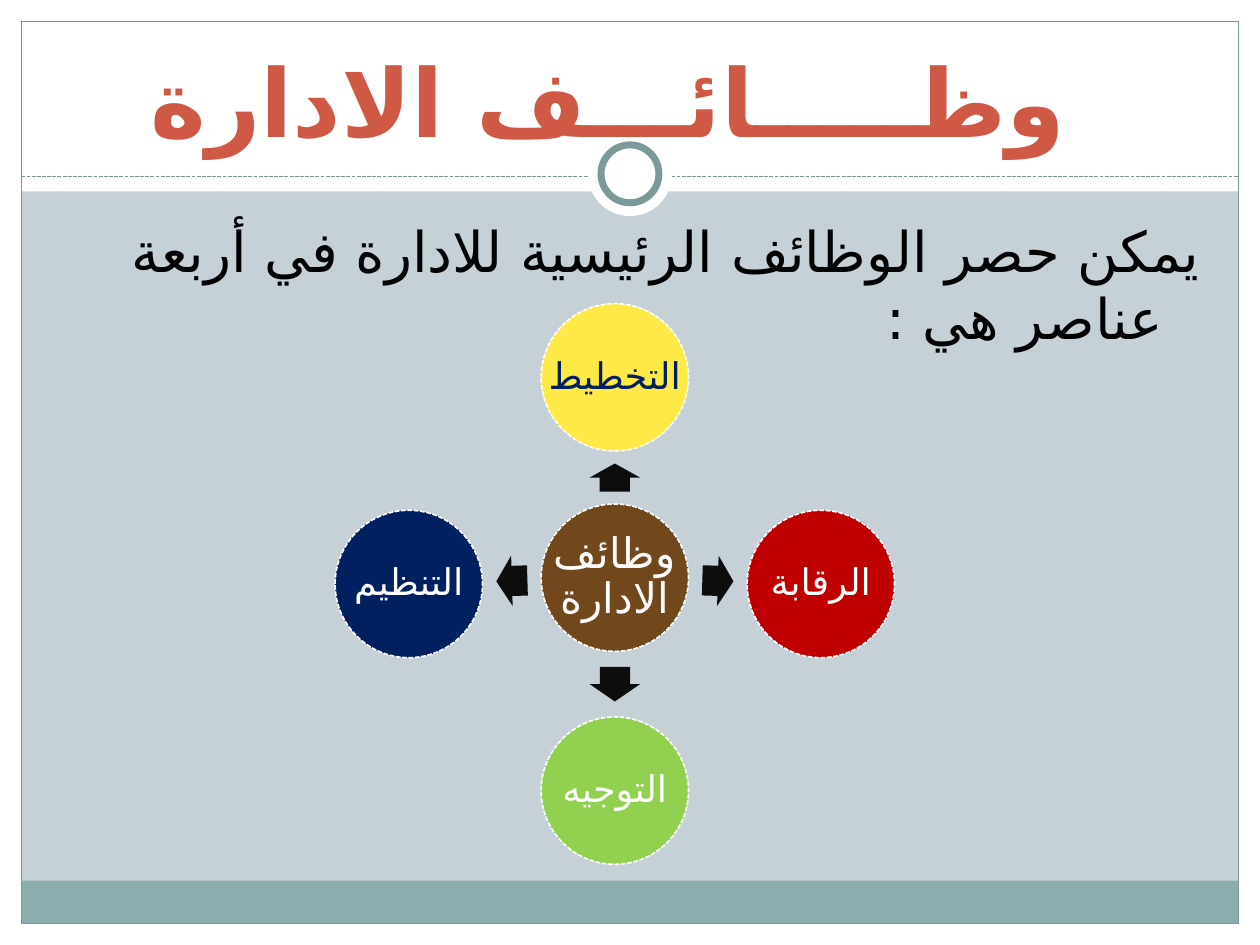
import math

import pptx
import pptx.util
from lxml import etree
from pptx.dml.color import RGBColor
from pptx.enum.dml import MSO_LINE
from pptx.enum.shapes import MSO_CONNECTOR, MSO_SHAPE
from pptx.enum.text import MSO_ANCHOR, PP_ALIGN
from pptx.oxml.ns import qn
from pptx.util import Inches, Pt

FONT = "Cambria"
ARABIC_FONT = "DejaVu Sans"
WHITE = RGBColor(0xFF, 0xFF, 0xFF)
BLACK = RGBColor(0x00, 0x00, 0x00)
BACKGROUND = RGBColor(0xC5, 0xD1, 0xD7)
FOOTER = RGBColor(0x8C, 0xAD, 0xAE)
FRAME = RGBColor(0x7C, 0x99, 0x9A)
TITLE = RGBColor(0xD0, 0x59, 0x45)
BROWN = RGBColor(0x71, 0x48, 0x1C)
YELLOW = RGBColor(0xFF, 0xE9, 0x47)
RED = RGBColor(0xC0, 0x00, 0x00)
GREEN = RGBColor(0x92, 0xD0, 0x50)
NAVY = RGBColor(0x00, 0x20, 0x60)
ARROW = RGBColor(0x0D, 0x0D, 0x0D)

MARGIN = 0.17
CIRCLE = 1.17
ARROW_WIDTH = 0.4
ARROW_SHARE = 0.53  # part of the gap between two circles that an arrow fills


def add_shape(slide, kind, box, fill=None, line=None, width=0.75, dash=None):
    shape = slide.shapes.add_shape(kind, *map(Inches, box))
    shape.shadow.inherit = False
    if fill is None:
        shape.fill.background()
    else:
        shape.fill.solid()
        shape.fill.fore_color.rgb = fill
    if line is None:
        shape.line.fill.background()
    else:
        shape.line.color.rgb = line
        shape.line.width = Pt(width)
        if dash is not None:
            shape.line.dash_style = dash
    return shape


def write_text(shape, text, size, color, bold=False, align=PP_ALIGN.CENTER,
               anchor=MSO_ANCHOR.TOP, wrap=True, line_spacing=None):
    """Fill the shape with one paragraph and return that paragraph."""
    frame = shape.text_frame
    frame.word_wrap = wrap
    frame.vertical_anchor = anchor
    paragraph = frame.paragraphs[0]
    paragraph.text = text
    paragraph.alignment = align
    paragraph.line_spacing = line_spacing
    for run in paragraph.runs:
        run.font.name = FONT
        run.font.size = Pt(size)
        run.font.bold = bold
        run.font.color.rgb = color
        complex_font = etree.SubElement(run.font._element, qn("a:cs"))
        complex_font.set("typeface", ARABIC_FONT)
    return paragraph


def add_frame(slide, box):
    """Draw the white border, header, footer band and ring of the page."""
    left, top, width, height = box
    inner_width = width - 2 * MARGIN
    bottom = top + height - MARGIN
    rectangle = MSO_SHAPE.RECTANGLE
    for white_band in (
        (left, bottom, width, MARGIN),
        (left, top, width, 1.52),
        (left, top, MARGIN, height),
        (left + width - MARGIN, top, MARGIN, height),
    ):
        add_shape(slide, rectangle, white_band, WHITE)
    add_shape(slide, rectangle, (left + MARGIN, bottom - 0.34, inner_width, 0.34), FOOTER)
    add_shape(slide, rectangle,
              (left + MARGIN, top + MARGIN, inner_width, height - 2 * MARGIN), line=FRAME)

    rule_y = Inches(top + 1.4)
    rule = slide.shapes.add_connector(
        MSO_CONNECTOR.STRAIGHT, Inches(left + MARGIN), rule_y,
        Inches(left + width - MARGIN), rule_y)
    rule.line.color.rgb = FRAME
    rule.line.width = Pt(0.75)
    rule.line.dash_style = MSO_LINE.SQUARE_DOT
    etree.SubElement(rule._element.spPr, qn("a:effectLst"))

    center_x, center_y = left + width / 2, top + 1.38
    for diameter, line in ((0.67, None), (0.46, FRAME)):
        ring_box = (center_x - diameter / 2, center_y - diameter / 2, diameter, diameter)
        add_shape(slide, MSO_SHAPE.OVAL, ring_box, WHITE, line, width=4)


def add_title(slide, box):
    title = slide.shapes.add_textbox(*map(Inches, box))
    write_text(title, "وظـــــائـــف الادارة ", 54, TITLE, bold=True)


def add_introduction(slide, box):
    introduction = slide.shapes.add_textbox(*map(Inches, box))
    paragraph = write_text(
        introduction, "يمكن حصر الوظائف الرئيسية للادارة في أربعة عناصر هي : ",
        32, BLACK, align=PP_ALIGN.RIGHT)
    paragraph.space_before = Pt(6.4)
    properties = paragraph._p.get_or_add_pPr()
    properties.set("rtl", "1")
    properties.set("marL", str(Inches(0.3)))
    properties.set("indent", str(Inches(-0.3)))


def add_circle(slide, center, text, size, fill, color=WHITE):
    box = (center[0] - CIRCLE / 2, center[1] - CIRCLE / 2, CIRCLE, CIRCLE)
    circle = add_shape(slide, MSO_SHAPE.OVAL, box, fill, WHITE, 0.9, MSO_LINE.SQUARE_DOT)
    frame = circle.text_frame
    frame.margin_left = frame.margin_right = Inches(0.03)
    frame.margin_top = frame.margin_bottom = Inches(0.03)
    write_text(circle, text, size, color, anchor=MSO_ANCHOR.MIDDLE,
               wrap=False, line_spacing=0.9)


def add_arrow(slide, start, end):
    """Point a block arrow from one circle centre to another, midway between them."""
    run, rise = end[0] - start[0], end[1] - start[1]
    length = ARROW_SHARE * (math.hypot(run, rise) - CIRCLE)
    middle_x, middle_y = (start[0] + end[0]) / 2, (start[1] + end[1]) / 2
    box = (middle_x - length / 2, middle_y - ARROW_WIDTH / 2, length, ARROW_WIDTH)
    arrow = add_shape(slide, MSO_SHAPE.RIGHT_ARROW, box, ARROW)
    arrow.adjustments[0] = 0.6
    arrow.adjustments[1] = 0.5
    arrow.rotation = math.degrees(math.atan2(rise, run)) % 360


def add_functions_diagram(slide, box):
    """Draw the hub and, at the middle of each side of the box, one function."""
    left, top, width, height = box
    center_x, center_y = left + width / 2, top + height / 2
    reach_x, reach_y = (width - CIRCLE) / 2, (height - CIRCLE) / 2
    hub = (center_x, center_y - 0.05)
    add_circle(slide, hub, "وظائف\vالادارة", 24, BROWN)
    for across, down, text, fill, color in (
        (0, -1, "التخطيط", YELLOW, NAVY),
        (1, 0, "الرقابة", RED, WHITE),
        (0, 1, "التوجيه", GREEN, WHITE),
        (-1, 0, "التنظيم", NAVY, WHITE),
    ):
        center = (center_x + across * reach_x, center_y + down * reach_y)
        add_arrow(slide, hub, center)
        add_circle(slide, center, text, 21, fill, color)


def main():
    presentation = pptx.Presentation()
    presentation.slide_width = Inches(10)
    presentation.slide_height = Inches(7.5)
    slide = presentation.slides.add_slide(presentation.slide_layouts[6])
    slide.background.fill.solid()
    slide.background.fill.fore_color.rgb = BACKGROUND
    add_frame(slide, (0, 0, 10, 7.5))
    add_introduction(slide, (0.33, 1.67, 9.3, 5))
    add_title(slide, (0.67, 0.29, 8.58, 1.01))
    add_functions_diagram(slide, (2.66, 2.41, 4.44, 4.45))
    presentation.save("out.pptx")


if __name__ == "__main__":
    main()
